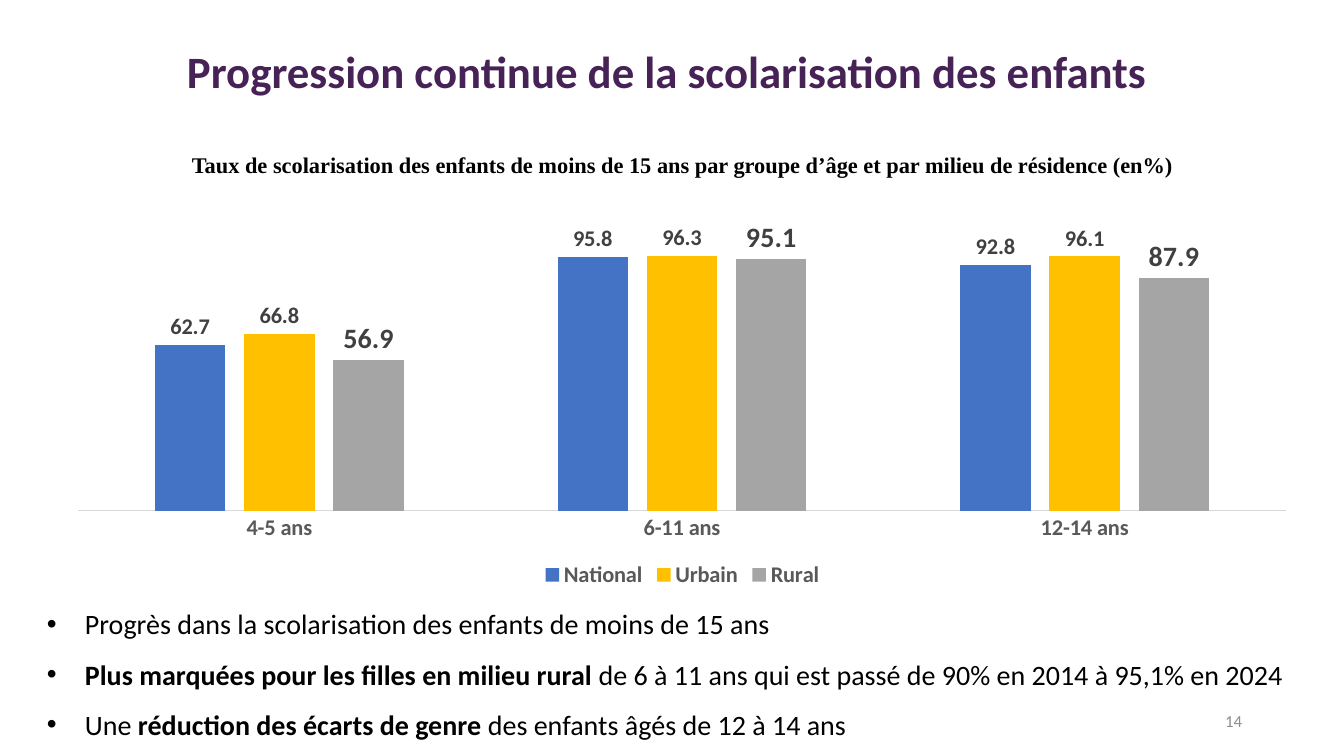
from lxml import etree
from pptx import Presentation
from pptx.chart.data import CategoryChartData
from pptx.dml.color import RGBColor
from pptx.enum.chart import XL_CHART_TYPE, XL_LABEL_POSITION, XL_LEGEND_POSITION, XL_TICK_MARK
from pptx.enum.text import MSO_ANCHOR, PP_ALIGN
from pptx.oxml import parse_xml
from pptx.oxml.ns import nsdecls, qn
from pptx.util import Pt

COLUMN = XL_CHART_TYPE.COLUMN_CLUSTERED
BELOW = XL_LEGEND_POSITION.BOTTOM
OUTSIDE = XL_LABEL_POSITION.OUTSIDE_END
NO_TICK = XL_TICK_MARK.NONE
TOP, MIDDLE = MSO_ANCHOR.TOP, MSO_ANCHOR.MIDDLE
CENTER, RIGHT, JUSTIFY = PP_ALIGN.CENTER, PP_ALIGN.RIGHT, PP_ALIGN.JUSTIFY

WIDE, HIGH = 1344, 756
SCALE = 12192000 / WIDE
COLORS = {
    "title": "462256", "black": "000000", "page": "8C8C8C",
    "axis": "D9D9D9", "muted": "595959", "label": "404040",
    "blue": "4472C4", "gold": "FFC000", "gray": "A5A5A5",
}
AGES = ["4-5 ans", "6-11 ans", "12-14 ans"]
# name, rates by age group, colour, label size
RATES = [
    ("National", (62.7, 95.8, 92.8), "blue", 16),
    ("Urbain", (66.8, 96.3, 96.1), "gold", 16),
    ("Rural", (56.9, 95.1, 87.9), "gray", 20),
]
# each point is a list of (text, bold) runs
POINTS = [
    [("Progrès dans la scolarisation des enfants de moins de 15 ans", False)],
    [("Plus marquées pour les filles en milieu rural ", True),
     ("de 6 à 11 ans qui est passé de 90% en 2014 à 95,1% en 2024", False)],
    [("Une ", False), ("réduction des écarts de genre ", True),
     ("des enfants âgés de 12 à 14 ans", False)],
]


def px(num):
    return round(num * SCALE)


def rgb(name):
    return RGBColor.from_string(COLORS[name])


class Page:
    def __init__(self, slide, face="Calibri"):
        self.slide = slide
        self.face = face

    def style(self, font, size, color, bold=False, face=None):
        font.name = face or self.face
        font.size = Pt(size)
        font.bold = bold
        font.color.rgb = rgb(color)

    def text(self, box, paras, size, color, align, face=None, anchor=TOP, bullet=False):
        frame = self.slide.shapes.add_textbox(*map(px, box)).text_frame
        frame.word_wrap = True
        frame.vertical_anchor = anchor
        for num, runs in enumerate(paras):
            para = frame.add_paragraph() if num else frame.paragraphs[0]
            para.alignment = align
            if bullet:
                self.bullet(para)
            for words, bold in runs:
                run = para.add_run()
                run.text = words
                self.style(run.font, size, color, bold, face)

    def bullet(self, para, indent=38):
        para.line_spacing = 1.5
        props = para._p.get_or_add_pPr()
        props.set("marL", str(px(indent)))
        props.set("indent", str(-px(indent)))
        etree.SubElement(props, qn("a:buFont"), typeface="Arial")
        etree.SubElement(props, qn("a:buChar"), char="•")

    def chart(self, box, plot_box):
        data = CategoryChartData(number_format="0.0")
        data.categories = AGES
        for name, rates, _, _ in RATES:
            data.add_series(name, rates)
        chart = self.slide.shapes.add_chart(COLUMN, *map(px, box), data).chart
        self.style(chart.font, 16, "black", True)
        chart.has_title = False
        chart.has_legend = True
        chart.legend.position = BELOW
        chart.legend.include_in_layout = False
        self.style(chart.legend.font, 16, "muted", True)

        axis = chart.category_axis
        axis.major_tick_mark = axis.minor_tick_mark = NO_TICK
        axis.format.line.color.rgb = rgb("axis")
        axis.format.line.width = Pt(0.75)
        self.style(axis.tick_labels.font, 16, "muted", True)
        scale = chart.value_axis
        scale.minimum_scale, scale.maximum_scale = 0, 120
        scale.has_major_gridlines = False
        scale.visible = False

        plot = chart.plots[0]
        plot.vary_by_categories = False
        plot.gap_width, plot.overlap = 219, -27
        for bars, (_, _, color, size) in zip(plot.series, RATES):
            bars.format.fill.solid()
            bars.format.fill.fore_color.rgb = rgb(color)
            labels = bars.data_labels
            labels.show_value = True
            labels.number_format = "0.0"
            labels.number_format_is_linked = False
            labels.position = OUTSIDE
            self.style(labels.font, size, "label", True)
        self.place(chart, box, plot_box)

    def place(self, chart, box, plot_box):
        """Fix the inner plot area, given in slide px."""
        left, top, wide, high = box
        x, y, w, h = plot_box
        parts = {"x": (x - left) / wide, "y": (y - top) / high,
                 "w": w / wide, "h": h / high}
        tags = "".join(f'<c:{key}Mode val="edge"/>' for key in "xy")
        tags += "".join(f'<c:{key} val="{val:.4f}"/>' for key, val in parts.items())
        area = chart._chartSpace.chart.plotArea
        for old in area.findall(qn("c:layout")):
            area.remove(old)
        area.insert(0, parse_xml(
            f'<c:layout {nsdecls("c")}><c:manualLayout>'
            f'<c:layoutTarget val="inner"/>{tags}</c:manualLayout></c:layout>'))


def main():
    deck = Presentation()
    deck.slide_width, deck.slide_height = px(WIDE), px(HIGH)
    page = Page(deck.slides.add_slide(deck.slide_layouts[6]))
    page.text((170, 39, 1004, 65),
              [[("Progression continue de la scolarisation des enfants ", True)]],
              32, "title", CENTER)
    page.text((136, 146, 1093, 37),
              [[("Taux de scolarisation des enfants de moins de 15 ans "
                 "par groupe d’âge et par milieu de résidence (en%)", True)]],
              16, "black", CENTER, face="Times New Roman")
    page.text((37, 585, 1291, 157), POINTS, 20, "black", JUSTIFY, bullet=True)
    page.chart((53, 184, 1259, 409), (78, 193, 1208, 318))
    page.text((950, 701, 302, 40), [[("14", False)]], 12, "page", RIGHT, anchor=MIDDLE)
    deck.save("out.pptx")


if __name__ == "__main__":
    main()
